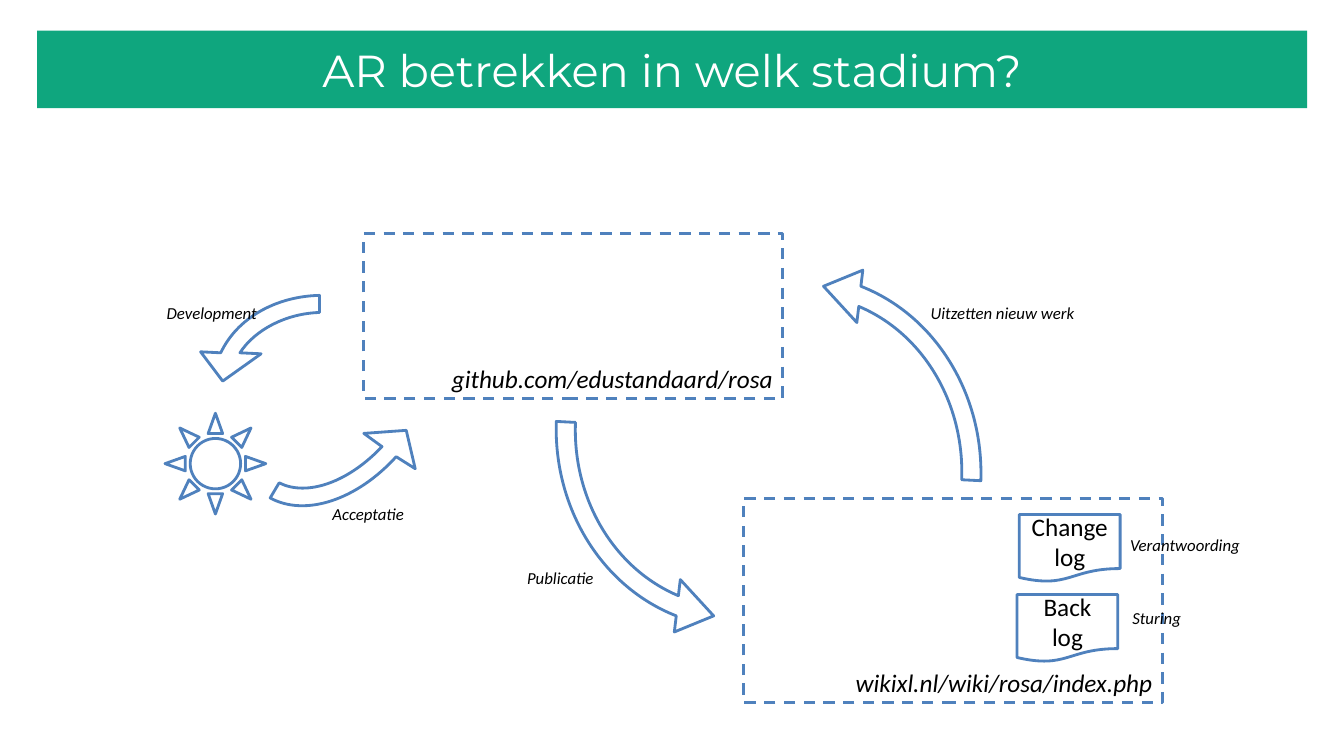
import math

from lxml import etree
from pptx import Presentation
from pptx import util as u
from pptx.dml.color import RGBColor
from pptx.enum import dml, shapes, text
from pptx.oxml.ns import qn

GREEN, BLUE, WHITE, BLACK = "0FA67E", "4F81BD", "FFFFFF", "000000"
TITLE = ("AR betrekken in welk stadium?", 26.6, 21.9, 907.2, 55.4)
SITES = [
    ("wikixl.nl/wiki/rosa/index.php", 531, 356.1, 299.3, 145.5),
    ("github.com/edustandaard/rosa", 259.8, 166.6, 299.3, 118),
]
LOGS = [("Changelog", 728.1, 367.5), ("Back log", 726.5, 424.7)]
LOG_SIZE = (72, 48.2)
SUN = (117.9, 295.2, 72, 72)
LABELS = [
    ("Development", 111.9, 212.4, 79.9),
    ("Acceptatie", 230.4, 356.4, 66.2),
    ("Publicatie", 369.4, 401.8, 62.6),
    ("Uitzetten nieuw werk", 657.6, 212.4, 118.8),
    ("Verantwoording", 800.1, 378.7, 97.2),
    ("Sturing", 801.7, 430.2, 97.2),
]
LABEL_HEIGHT = 21.6
PUBLISH = [
    (397.4, 301), (395.3, 362.9), (429.8, 419), (483.1, 439.9),
    (481.7, 451.4), (509.8, 439.9), (486, 414), (484.6, 425.5),
    (438.5, 406.1), (409, 356.4), (411.1, 301.7),
]
DEVELOP = [
    (228.2, 211), (196.6, 211.7), (169.2, 227.5), (157.7, 252),
    (143.3, 251.3), (159.1, 272.2), (186.5, 252.7), (171.4, 252),
    (182.2, 235.4), (204.5, 223.9), (228.2, 223.2),
]
ACCEPT = [
    (193, 355.7), (218.2, 369.4), (254.9, 357.1), (283, 326.2),
    (296.6, 334.8), (290.2, 307.4), (259.9, 309.6), (272.9, 319),
    (249.1, 344.2), (219.6, 355), (199.4, 344.9),
]
NEW_WORK = [(1098 - x, 644.4 - y) for x, y in PUBLISH]
ARROWS = [
    (PUBLISH, (373.7, 165.6, 306.7, 283.7), 270),
    (NEW_WORK, (417.6, 195.8, 306.7, 283.7), 90),
    (DEVELOP, (136.8, 195.1, 187.9, 159.1), 0),
    (ACCEPT, (163.4, 163.4, 159.1, 222.5), 214.6),
]
ARROW_STEPS = [
    ("moveTo", 1), ("cubicBezTo", 3), ("lnTo", 1), ("lnTo", 1),
    ("lnTo", 1), ("lnTo", 1), ("cubicBezTo", 3), ("close", 0),
]


def color(value):
    return RGBColor.from_string(value)


def paint(shape, fill=WHITE, line=BLUE, dashed=False):
    shape.shadow.inherit = False
    shape.fill.solid()
    shape.fill.fore_color.rgb = color(fill)
    if line is None:
        shape.line.fill.background()
        return
    shape.line.color.rgb = color(line)
    shape.line.width = u.Pt(2)
    if dashed:
        shape.line.dash_style = dml.MSO_LINE.DASH


def write(shape, words, size, align, anchor, font="Calibri", ink=BLACK, italic=False):
    frame = shape.text_frame
    frame.text = words
    frame.word_wrap = True
    frame.vertical_anchor = anchor
    para = frame.paragraphs[0]
    para.alignment = align
    span = para.runs[0].font
    span.name, span.size, span.italic = font, u.Pt(size), italic
    span.color.rgb = color(ink)


def add_box(page, kind, *place):
    return page.shapes.add_shape(kind, *map(u.Pt, place))


def turn_back(point, frame, angle):
    left, top, width, height = frame
    dx, dy = point[0] - left - width / 2, point[1] - top - height / 2
    cos, sin = math.cos(math.radians(angle)), math.sin(math.radians(angle))
    return width / 2 + dx * cos + dy * sin, height / 2 - dx * sin + dy * cos


def add_arrow(page, points, frame, angle):
    builder = page.shapes.build_freeform()
    builder.add_line_segments([(u.Pt(x), u.Pt(y)) for x, y in points])
    arrow = builder.convert_to_shape()
    arrow.left, arrow.top, arrow.width, arrow.height = map(u.Pt, frame)
    arrow.rotation = angle
    paint(arrow)

    outline = next(arrow.element.iter(qn("a:path")))
    for step in list(outline):
        outline.remove(step)
    outline.set("w", str(arrow.width))
    outline.set("h", str(arrow.height))
    local = iter([turn_back(point, frame, angle) for point in points])
    for name, count in ARROW_STEPS:
        step = etree.SubElement(outline, qn("a:" + name))
        for _ in range(count):
            x, y = next(local)
            etree.SubElement(step, qn("a:pt"), x=str(int(u.Pt(x))), y=str(int(u.Pt(y))))


def main():
    deck = Presentation()
    deck.slide_width, deck.slide_height = u.Pt(960), u.Pt(540)
    page = deck.slides.add_slide(deck.slide_layouts[6])
    kinds, align, anchor = shapes.MSO_SHAPE, text.PP_ALIGN, text.MSO_ANCHOR

    title = add_box(page, kinds.RECTANGLE, *TITLE[1:])
    paint(title, GREEN, None)
    write(title, TITLE[0], 32, align.CENTER, anchor.MIDDLE, "Montserrat", WHITE)

    for words, *place in SITES:
        site = add_box(page, kinds.RECTANGLE, *place)
        paint(site, dashed=True)
        write(site, words, 18, align.RIGHT, anchor.BOTTOM, italic=True)

    for points, frame, angle in ARROWS:
        add_arrow(page, points, frame, angle)
    paint(add_box(page, kinds.SUN, *SUN))

    for words, left, top in LOGS:
        log = add_box(page, kinds.FLOWCHART_DOCUMENT, left, top, *LOG_SIZE)
        paint(log)
        write(log, words, 18, align.CENTER, anchor.MIDDLE)

    for words, *place in LABELS:
        label = page.shapes.add_textbox(*map(u.Pt, (*place, LABEL_HEIGHT)))
        write(label, words, 12, align.LEFT, anchor.TOP, italic=True)
        label.text_frame.margin_right = 0

    deck.save("out.pptx")


if __name__ == "__main__":
    main()
